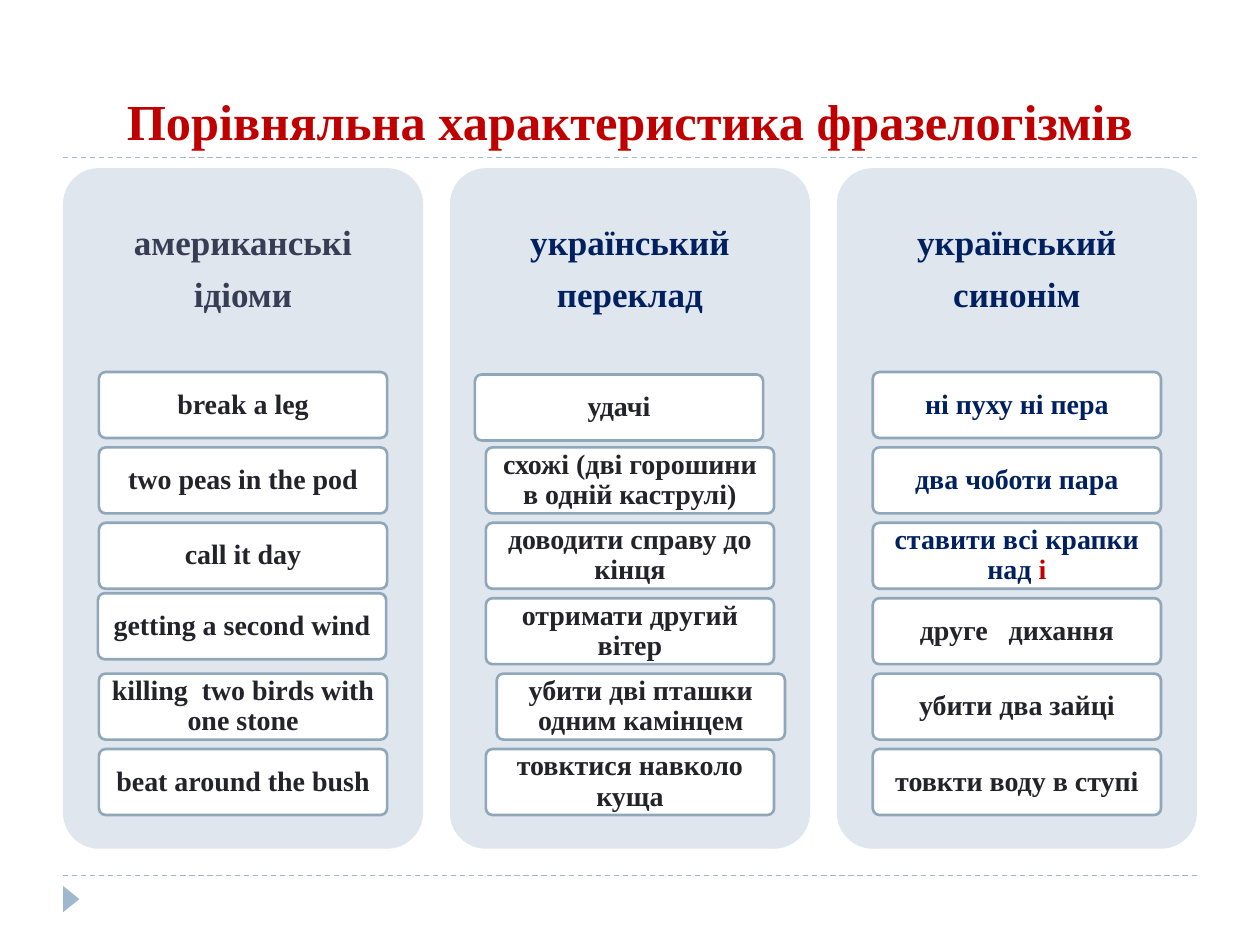
import pptx
import pptx.util
import pptx.dml.color
import pptx.enum.dml
import pptx.enum.shapes
import pptx.enum.text
import pptx.oxml

Cm = pptx.util.Cm
Pt = pptx.util.Pt
KIND = pptx.enum.shapes.MSO_SHAPE
ANCHOR = pptx.enum.text.MSO_ANCHOR

# Content: a column has a heading, its colour and its cards
COLORS = {
    "red": "C00000", "navy": "002060", "slate": "373D54", "ink": "23232A",
    "panel": "DFE6ED", "edge": "90A7BA", "rule": "9FB8CD", "white": "FFFFFF",
}
TITLE = "Порівняльна характеристика фразелогізмів"
COLUMNS = [
    (["американські", "ідіоми"], "slate", [
        "break a leg", "two peas in the pod", "call it day",
        "getting a second wind", "killing  two birds with one stone",
        "beat around the bush"]),
    (["український", "переклад"], "navy", [
        "удачі", "схожі (дві горошини в одній каструлі)",
        "доводити справу до кінця", "отримати другий вітер",
        "убити дві пташки одним камінцем", "товктися навколо куща"]),
    (["український", "синонім"], "navy", [
        [("ні пуху ні пера", "navy")], [("два чоботи пара", "navy")],
        [("ставити всі крапки над ", "navy"), ("і", "red")],
        "друге   дихання", "убити два зайці", "товкти воду в ступі"]),
]
# Cards moved off the grid: (column, row) to (right, down)
SHIFTS = {(0, 3): (-0.02, -0.1), (1, 0): (-0.22, 0.05), (1, 4): (0.22, 0)}

# Layout in centimetres
LEFT, WIDTH = 1.27, 22.86
PANEL = {"top": 3.39, "wide": 7.26, "high": 13.72, "head": 4.11}
CARD = {"top": 7.5, "wide": 5.81, "high": 1.33, "step": 1.52}
STEP = (WIDTH - PANEL["wide"]) / (len(COLUMNS) - 1)
INSET = (PANEL["wide"] - CARD["wide"]) / 2


def rgb(name):
    return pptx.dml.color.RGBColor.from_string(COLORS[name])


def write(shape, lines, size=16, color="ink", pad=(0.11, 0.08), after=0,
          space=0.9, anchor=ANCHOR.MIDDLE):
    """Fill a shape with lines; a line is a string or (text, colour) runs."""
    frame = shape.text_frame
    frame.word_wrap = True
    frame.vertical_anchor = anchor
    frame.margin_left = frame.margin_right = Cm(pad[0])
    frame.margin_top = frame.margin_bottom = Cm(pad[1])
    for num, line in enumerate(lines):
        para = frame.add_paragraph() if num else frame.paragraphs[0]
        para.alignment = pptx.enum.text.PP_ALIGN.CENTER
        para.line_spacing = space
        para.space_before = Pt(0)
        para.space_after = Pt(after)
        for text, tint in [(line, color)] if isinstance(line, str) else line:
            run = para.add_run()
            run.text = text
            run.font.name = "Times New Roman"
            run.font.size = Pt(size)
            run.font.bold = True
            run.font.color.rgb = rgb(tint)


def draw(slide, kind, box, fill, edge=None):
    shape = slide.shapes.add_shape(kind, *[Cm(n) for n in box])
    shape.shadow.inherit = False
    shape.fill.solid()
    shape.fill.fore_color.rgb = rgb(fill)
    if edge:
        shape.line.color.rgb = rgb(edge)
        shape.line.width = Pt(1.5)
    else:
        shape.line.fill.background()
    if kind == KIND.ROUNDED_RECTANGLE:
        shape.adjustments[0] = 0.1
    return shape


def rule(slide, y):
    line = slide.shapes.add_connector(
        pptx.enum.shapes.MSO_CONNECTOR.STRAIGHT,
        Cm(LEFT), Cm(y), Cm(LEFT + WIDTH), Cm(y))
    line.line.color.rgb = rgb("rule")
    line.line.width = Pt(0.75)
    line.line.dash_style = pptx.enum.dml.MSO_LINE.DASH
    props = line._element.spPr
    props.append(props.makeelement(pptx.oxml.ns.qn("a:effectLst"), {}))


def main():
    deck = pptx.Presentation()
    deck.slide_width, deck.slide_height = Cm(25.4), Cm(19.05)
    slide = deck.slides.add_slide(deck.slide_layouts[5])

    # Rules and corner mark
    for y in (17.65, 3.18):
        rule(slide, y)
    mark = draw(slide, KIND.ISOSCELES_TRIANGLE, (1.17, 17.96, 0.53, 0.33), "rule")
    mark.rotation = 90

    # Title
    title = slide.shapes.title
    title.left, title.top = Cm(LEFT), Cm(0.43)
    title.width, title.height = Cm(WIDTH), Cm(2.74)
    write(title, [TITLE], size=28.8, color="red", pad=(0.25, 0.13), space=1,
          anchor=ANCHOR.BOTTOM)

    # Columns
    for col, (head, tint, cards) in enumerate(COLUMNS):
        x = LEFT + col * STEP
        draw(slide, KIND.ROUNDED_RECTANGLE,
             (x, PANEL["top"], PANEL["wide"], PANEL["high"]), "panel")
        box = slide.shapes.add_textbox(
            Cm(x), Cm(PANEL["top"]), Cm(PANEL["wide"]), Cm(PANEL["head"]))
        write(box, head, size=20, color=tint, pad=(0.2, 0.2), after=8)

        for row, text in enumerate(cards):
            right, down = SHIFTS.get((col, row), (0, 0))
            card = draw(slide, KIND.ROUNDED_RECTANGLE,
                        (x + INSET + right, CARD["top"] + row * CARD["step"] + down,
                         CARD["wide"], CARD["high"]), "white", "edge")
            write(card, [text])

    deck.save("out.pptx")


if __name__ == "__main__":
    main()
